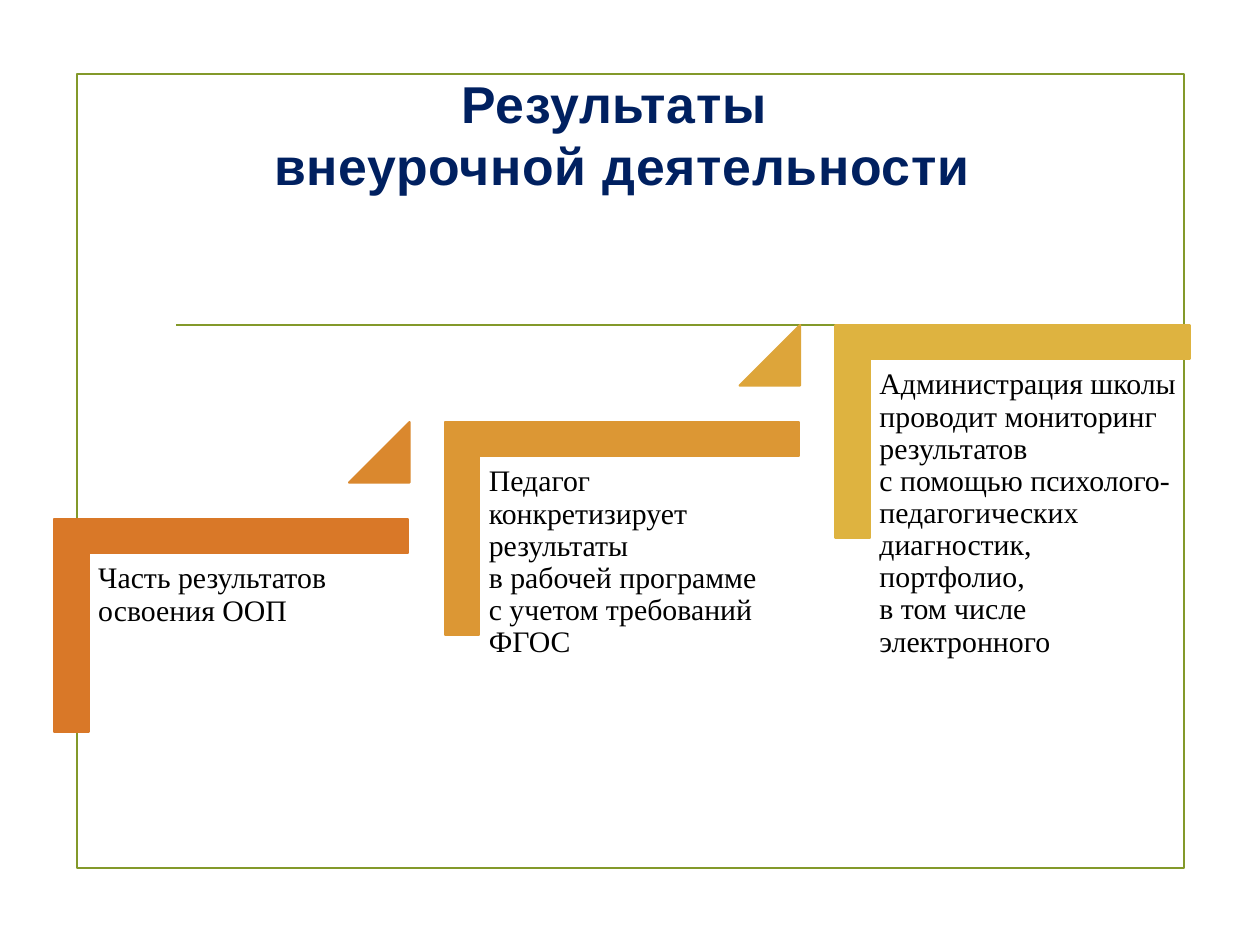
from dataclasses import dataclass

from lxml.etree import SubElement
from pptx import Presentation
from pptx.dml.color import RGBColor
from pptx.enum.shapes import MSO_CONNECTOR as Connector
from pptx.enum.shapes import MSO_SHAPE as Preset
from pptx.enum.text import MSO_ANCHOR as Anchor
from pptx.enum.text import PP_ALIGN as Align
from pptx.oxml.ns import qn
from pptx.shapes.autoshape import Shape
from pptx.slide import Slide
from pptx.text.text import _Paragraph as Paragraph
from pptx.util import Inches, Pt

FRAME_COLOR = "83992A"
LINE_WIDTH = Pt(1.25)
STEP_RIGHT, STEP_UP = 3.1, 0.77
CORNER_RATIO = 0.161


@dataclass(frozen=True)
class Step:
    lines: tuple[str, ...]
    color: str
    triangle_color: str | None = None


STEPS = (
    Step(("Часть результатов освоения ООП",), "D97828", "DA882E"),
    Step(
        (
            "Педагог конкретизирует результаты ",
            "в рабочей программе ",
            "с учетом требований ФГОС",
        ),
        "DC9734",
        "DDA53A",
    ),
    Step(
        (
            "Администрация школы проводит мониторинг результатов ",
            "с помощью психолого-педагогических диагностик, портфолио, ",
            "в том числе электронного",
        ),
        "DEB340",
    ),
)


def rgb(color: str) -> RGBColor:
    return RGBColor.from_string(color)


def add_preset(
    slide: Slide, preset: Preset, box: tuple[float, ...], line: str, fill: str | None = None
) -> Shape:
    shape = slide.shapes.add_shape(preset, *map(Inches, box))
    shape.shadow.inherit = False
    shape.line.color.rgb = rgb(line)
    shape.line.width = LINE_WIDTH
    if fill:
        shape.fill.solid()
        shape.fill.fore_color.rgb = rgb(fill)
    else:
        shape.fill.background()
    return shape


def add_text(
    slide: Slide,
    box: tuple[float, ...],
    lines: tuple[str, ...],
    font_name: str,
    size: float,
    color: str,
    bold: bool = False,
    spacing: float = 0,
) -> tuple[Shape, Paragraph]:
    shape = slide.shapes.add_textbox(*map(Inches, box))
    shape.text_frame.word_wrap = True
    paragraph = shape.text_frame.paragraphs[0]
    paragraph.font.size = Pt(size)
    for index, line in enumerate(lines):
        if index:
            paragraph.add_line_break()
        run = paragraph.add_run()
        run.text = line
        run.font.name = font_name
        run.font.size = Pt(size)
        run.font.bold = bold
        run.font.color.rgb = rgb(color)
        if spacing:
            run.font._element.set("spc", str(round(spacing * 100)))
    for line_break in paragraph._p.findall(qn("a:br")):
        SubElement(line_break, qn("a:rPr")).set("sz", str(round(size * 100)))
    return shape, paragraph


def add_frame(slide: Slide) -> None:
    add_preset(slide, Preset.RECTANGLE, (0.61, 0.59, 8.79, 6.3), FRAME_COLOR)
    rule = slide.shapes.add_connector(
        Connector.STRAIGHT, Inches(1.4), Inches(2.58), Inches(8.61), Inches(2.58)
    )
    rule.line.color.rgb = rgb(FRAME_COLOR)
    rule.line.width = LINE_WIDTH
    SubElement(rule._element.spPr, qn("a:effectLst"))


def add_title(slide: Slide) -> None:
    title, paragraph = add_text(
        slide,
        (-0.06, 0.68, 10, 0.77),
        ("Результаты ", "внеурочной деятельности"),
        "Arial",
        29.6,
        "002060",
        bold=True,
        spacing=0.4,
    )
    title.text_frame.vertical_anchor = Anchor.MIDDLE
    paragraph.alignment = Align.CENTER


def add_step(slide: Slide, index: int, step: Step) -> None:
    right, up = index * STEP_RIGHT, index * STEP_UP
    corner = add_preset(
        slide, Preset.CORNER, (0.99 + right, 3.56 - up, 1.69, 2.81), step.color, step.color
    )
    corner.rotation = 90
    corner.adjustments[0] = corner.adjustments[1] = CORNER_RATIO

    label, paragraph = add_text(
        slide,
        (0.71 + right, 4.4 - up, 2.53, 2.22),
        step.lines,
        "Times New Roman",
        17,
        "000000",
    )
    frame = label.text_frame
    frame.margin_left = frame.margin_right = Inches(0.07)
    frame.margin_top = frame.margin_bottom = Inches(0.07)
    paragraph.line_spacing = 0.9

    if step.triangle_color:
        triangle = add_preset(
            slide,
            Preset.ISOSCELES_TRIANGLE,
            (2.77 + right, 3.35 - up, 0.48, 0.48),
            step.triangle_color,
            step.triangle_color,
        )
        triangle.adjustments[0] = 1


def main() -> None:
    """Build the slide with the three rising steps of results."""
    presentation = Presentation()
    presentation.slide_width = Inches(10)
    presentation.slide_height = Inches(7.5)
    slide = presentation.slides.add_slide(presentation.slide_layouts[6])
    add_frame(slide)
    add_title(slide)
    for index, step in enumerate(STEPS):
        add_step(slide, index, step)
    presentation.save("out.pptx")


if __name__ == "__main__":
    main()
